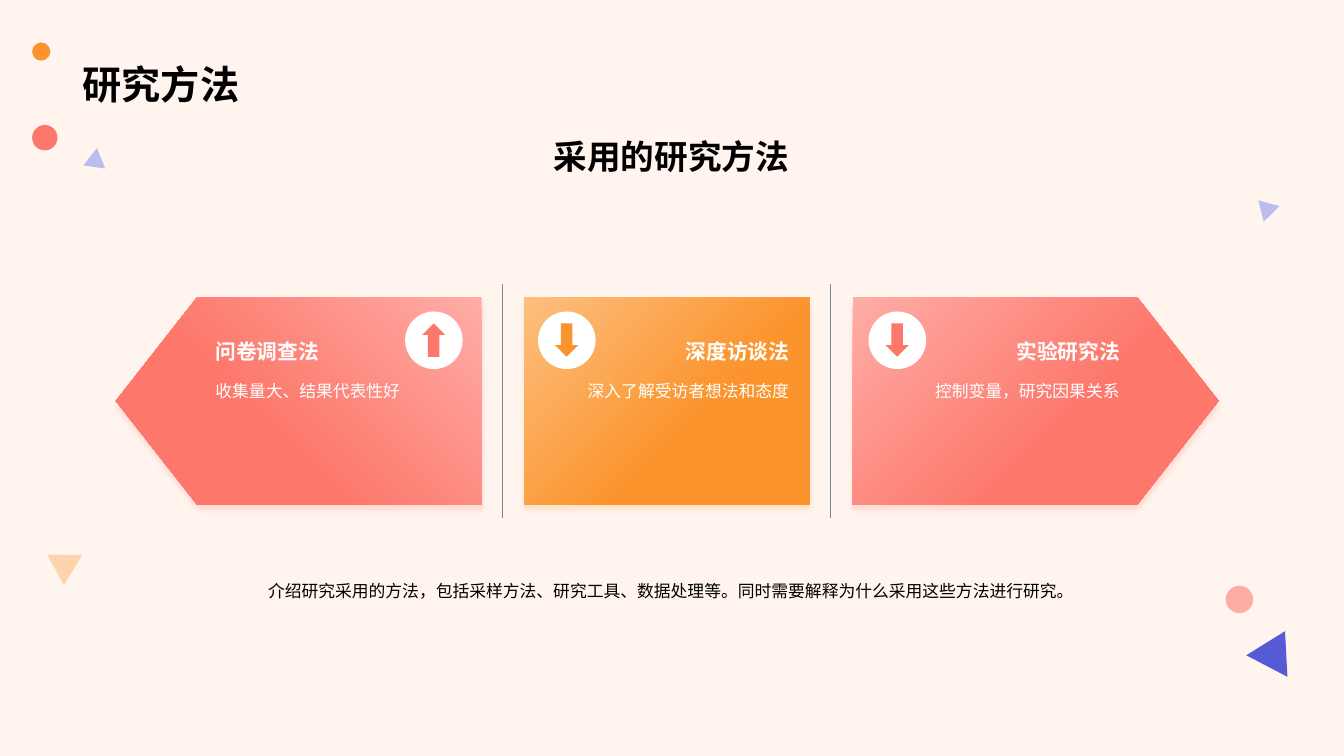
import pptx
import pptx.dml.color
import pptx.enum.lang
import pptx.enum.shapes
import pptx.enum.text
import pptx.oxml
import pptx.oxml.ns
import pptx.util

Cm = pptx.util.Cm
SHAPE = pptx.enum.shapes.MSO_SHAPE
ALIGN = pptx.enum.text.PP_ALIGN
ANCHOR = pptx.enum.text.MSO_ANCHOR

CORAL, PINK = "FD776B", "FEADA6"
ORANGE, PEACH = "FB942C", "FDBF80"
LILAC, WHITE, BLACK = "BBBDEE", "FFFFFF", "000000"

ORNAMENTS = [
    (SHAPE.OVAL, 0.81, 3.15, 0.64, 0.64, 0, CORAL),
    (SHAPE.ISOSCELES_TRIANGLE, 31.57, 15.85, 1.17, 0.99, 27.6, "565BD5"),
    (SHAPE.OVAL, 0.81, 1.07, 0.46, 0.46, 0, ORANGE),
    (SHAPE.OVAL, 30.89, 14.76, 0.69, 0.69, 0, PINK),
    (SHAPE.ISOSCELES_TRIANGLE, 31.6, 4.98, 0.56, 0.48, 315.6, LILAC),
    (SHAPE.ISOSCELES_TRIANGLE, 2.13, 3.73, 0.56, 0.48, 8.2, LILAC),
    (SHAPE.ISOSCELES_TRIANGLE, 1.07, 13.79, 0.89, 0.76, 301.1, "FDD4AB"),
]


def paint(color_format, color):
    """Give a colour format a hex colour."""
    color_format.rgb = pptx.dml.color.RGBColor.from_string(color)


def add_plain(slide, kind, left, top, width, height, color, turn=0):
    """Add a flat preset shape without outline or shadow."""
    shape = slide.shapes.add_shape(kind, Cm(left), Cm(top), Cm(width), Cm(height))
    shape.shadow.inherit = False
    shape.line.fill.background()
    shape.fill.solid()
    paint(shape.fill.fore_color, color)
    shape.rotation = turn
    return shape


def write(shape, text, size, color, bold=False, align=ALIGN.LEFT, anchor=ANCHOR.TOP, spacing=1.0):
    """Put one formatted paragraph into a shape."""
    frame = shape.text_frame
    frame.text = text
    frame.word_wrap = True
    frame.vertical_anchor = anchor
    para = frame.paragraphs[0]
    para.alignment = align
    para.line_spacing = spacing
    font = para.runs[0].font
    font.name = "Arial"
    font.size = pptx.util.Pt(size)
    font.bold = bold
    font.language_id = pptx.enum.lang.MSO_LANGUAGE_ID.SIMPLIFIED_CHINESE
    paint(font.color, color)


def add_text(slide, left, top, width, height, text, size, color, grow=True, **style):
    """Add a text box that may grow with its text."""
    box = slide.shapes.add_textbox(Cm(left), Cm(top), Cm(width), Cm(height))
    write(box, text, size, color, **style)
    sizing = pptx.enum.text.MSO_AUTO_SIZE
    box.text_frame.auto_size = sizing.SHAPE_TO_FIT_TEXT if grow else sizing.NONE


def set_effects(shape, content=""):
    """Replace the effect list of a shape or connector."""
    properties = shape._element.spPr
    for effects in properties.findall(pptx.oxml.ns.qn("a:effectLst")):
        properties.remove(effects)
    properties.append(pptx.oxml.parse_xml(
        f'<a:effectLst {pptx.oxml.ns.nsdecls("a")}>{content}</a:effectLst>'))


def add_shadow(shape, color):
    """Drop a soft shadow straight below a shape."""
    set_effects(
        shape,
        '<a:outerShdw blurRad="50800" dist="50800" dir="5400000" algn="t" rotWithShape="0">'
        f'<a:srgbClr val="{color}"><a:alpha val="20000"/></a:srgbClr></a:outerShdw>')


def add_panel(slide, kind, left, width, light, color, flipped=False):
    """Add a panel that blends from a light to a full colour."""
    panel = add_plain(slide, kind, left, 7.49, width, 5.23, color)
    panel.fill.gradient()
    panel.fill.gradient_angle = 315
    for stop, shade, position in zip(panel.fill.gradient_stops, (light, color), (0, 0.6)):
        paint(stop.color, shade)
        stop.position = position
    if kind == SHAPE.PENTAGON:
        panel.adjustments[0] = 0.392
    if flipped:
        panel._element.spPr.xfrm.set("flipH", "1")
    add_shadow(panel, color)


def add_badge(slide, left, color, turn):
    """Add a white disc holding an arrow."""
    add_plain(slide, SHAPE.OVAL, left, 7.85, 1.45, 1.45, WHITE)
    add_plain(slide, SHAPE.DOWN_ARROW, left + 0.43, 8.15, 0.58, 0.84, color, turn)


def add_caption(slide, edge, align, heading, detail):
    """Add heading and detail lines set flush to one edge."""
    rows = [
        (8.36, 3.25, 0.94, heading, 14.8, dict(bold=True, anchor=ANCHOR.BOTTOM, grow=False)),
        (9.37, 6.38, 0.81, detail, 12, dict(spacing=1.2)),
    ]
    for top, width, height, text, size, style in rows:
        left = edge - width if align == ALIGN.RIGHT else edge
        add_text(slide, left, top, width, height, text, size, WHITE, align=align, **style)


def add_divider(slide, x):
    """Add a vertical rule between two panels."""
    divider = slide.shapes.add_connector(
        pptx.enum.shapes.MSO_CONNECTOR.STRAIGHT, Cm(x), Cm(7.16), Cm(x), Cm(13.06))
    divider.line.width = pptx.util.Pt(1)
    paint(divider.line.color, "778495")
    set_effects(divider)


def main():
    """Build the research methods slide."""
    deck = pptx.Presentation()
    deck.slide_width, deck.slide_height = Cm(33.87), Cm(19.05)
    slide = deck.slides.add_slide(deck.slide_layouts[5])
    slide.background.fill.solid()
    paint(slide.background.fill.fore_color, "FFF5EE")

    title = slide.shapes.title
    title.left, title.top, title.width, title.height = Cm(1.83), Cm(0), Cm(30.18), Cm(2.84)
    write(title, "研究方法", 28, BLACK, bold=True, anchor=ANCHOR.BOTTOM)

    for kind, left, top, width, height, turn, color in ORNAMENTS:
        add_plain(slide, kind, left, top, width, height, color, turn)

    add_text(slide, 1.83, 3.3, 30.18, 1.27, "采用的研究方法", 24, BLACK,
             bold=True, align=ALIGN.CENTER, anchor=ANCHOR.BOTTOM)
    add_text(slide, 2.41, 14.4, 29.01, 0.81,
             "介绍研究采用的方法，包括采样方法、研究工具、数据处理等。同时需要解释为什么采用这些方法进行研究。",
             12, BLACK, align=ALIGN.CENTER, spacing=1.2)

    add_panel(slide, SHAPE.PENTAGON, 2.92, 9.22, PINK, CORAL, flipped=True)
    add_badge(slide, 10.21, CORAL, 180)
    add_caption(slide, 5.18, ALIGN.LEFT, "问卷调查法", "收集量大、结果代表性好")

    add_panel(slide, SHAPE.RECTANGLE, 13.21, 7.19, PEACH, ORANGE)
    add_badge(slide, 13.56, ORANGE, 0)
    add_caption(slide, 20.14, ALIGN.RIGHT, "深度访谈法", "深入了解受访者想法和态度")

    add_panel(slide, SHAPE.PENTAGON, 21.49, 9.22, PINK, CORAL)
    add_badge(slide, 21.89, CORAL, 0)
    add_caption(slide, 28.47, ALIGN.RIGHT, "实验研究法", "控制变量，研究因果关系")

    for x in (12.67, 20.93):
        add_divider(slide, x)

    deck.save("out.pptx")


if __name__ == "__main__":
    main()
